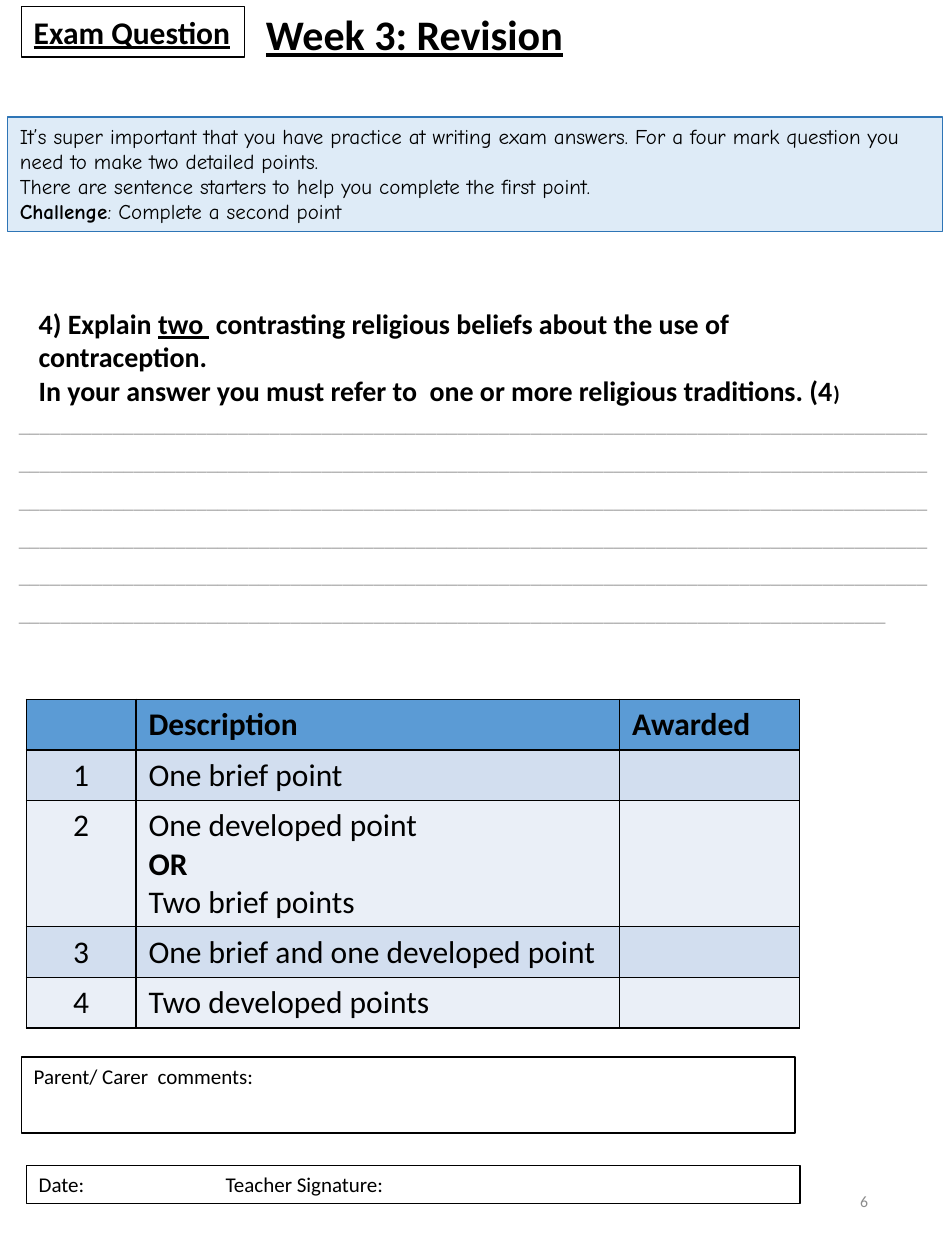
from lxml.etree import SubElement
from pptx import Presentation
from pptx.dml.color import RGBColor
from pptx.enum.shapes import MSO_SHAPE as Shape
from pptx.enum.text import MSO_ANCHOR as Anchor, PP_ALIGN as Align
from pptx.oxml.ns import qn
from pptx.util import Cm, Pt

BLACK = RGBColor(0, 0, 0)
GREY = RGBColor(0x8C, 0x8C, 0x8C)
RULE_GREY = RGBColor(0xA6, 0xA6, 0xA6)
INFO_FILL = RGBColor(0xDE, 0xEB, 0xF7)
INFO_LINE = RGBColor(0x2E, 0x75, 0xB6)
HEADER_FILL = RGBColor(0x5B, 0x9B, 0xD5)
BAND_FILLS = [RGBColor(0xD2, 0xDE, 0xEF), RGBColor(0xEA, 0xEF, 0xF7)]

MARKS = [
    ["", "Description", "Awarded"],
    ["1", "One brief point", ""],
    ["2", ["One developed point", [("OR", {"bold": True})], "Two brief points"], ""],
    ["3", "One brief and one developed point", ""],
    ["4", "Two developed points", ""],
]
COL_WIDTHS = [2.21, 9.75, 3.63]
ROW_HEIGHTS = [1.02, 1.02, 2.54, 1.02, 1.02]


def write(tf, paragraphs, *, size=12, font="Calibri", color=BLACK, bold=False,
          underline=False, align=Align.LEFT, spacing=None):
    """Fill a text frame; a paragraph is a string or a list of (text, format) runs."""
    if isinstance(paragraphs, str):
        paragraphs = [paragraphs]
    for i, content in enumerate(paragraphs):
        p = tf.paragraphs[0] if i == 0 else tf.add_paragraph()
        p.alignment = align
        if spacing:
            p.line_spacing = spacing
        runs = [(content, {})] if isinstance(content, str) else content
        for text, own in runs:
            r = p.add_run()
            r.text = text
            r.font.name = font
            r.font.size = Pt(own.get("size", size))
            r.font.bold = own.get("bold", bold)
            r.font.underline = own.get("underline", underline)
            r.font.color.rgb = color


def add_text(s, box, paragraphs, anchor=Anchor.TOP, **fmt):
    sp = s.shapes.add_textbox(*map(Cm, box))
    tf = sp.text_frame
    tf.word_wrap = True
    tf.vertical_anchor = anchor
    write(tf, paragraphs, **fmt)


def add_panel(s, box, paragraphs, fill=None, line=BLACK, **fmt):
    """Add an outlined rectangle with text at its top left."""
    sp = s.shapes.add_shape(Shape.RECTANGLE, *map(Cm, box))
    sp.shadow.inherit = False
    if fill:
        sp.fill.solid()
        sp.fill.fore_color.rgb = fill
    else:
        sp.fill.background()
    sp.line.color.rgb = line
    sp.line.width = Pt(0.75)
    tf = sp.text_frame
    tf.word_wrap = True
    tf.vertical_anchor = Anchor.TOP
    write(tf, paragraphs, **fmt)
    return sp


def add_tab_stop(p, position):
    tabs = SubElement(p._p.get_or_add_pPr(), qn("a:tabLst"))
    SubElement(tabs, qn("a:tab"), pos=str(position), algn="l")


def style_cell(cell, fill):
    """Set black borders, then the fill, in the order the schema asks for."""
    tc_pr = cell._tc.get_or_add_tcPr()
    for side in ("a:lnL", "a:lnR", "a:lnT", "a:lnB"):
        ln = SubElement(tc_pr, qn(side), w=str(Pt(1)))
        solid = SubElement(ln, qn("a:solidFill"))
        SubElement(solid, qn("a:srgbClr"), val=str(BLACK))
    cell.fill.solid()
    cell.fill.fore_color.rgb = fill


def add_mark_table(s, left, top):
    frame = s.shapes.add_table(len(MARKS), len(COL_WIDTHS), Cm(left), Cm(top),
                               Cm(sum(COL_WIDTHS)), Cm(sum(ROW_HEIGHTS)))
    table = frame.table
    for col, width in zip(table.columns, COL_WIDTHS):
        col.width = Cm(width)
    for i, (row, height) in enumerate(zip(MARKS, ROW_HEIGHTS)):
        table.rows[i].height = Cm(height)
        fill = BAND_FILLS[(i - 1) % 2] if i else HEADER_FILL
        for j, content in enumerate(row):
            cell = table.cell(i, j)
            style_cell(cell, fill)
            if content:
                write(cell.text_frame, content, size=18, bold=i == 0,
                      align=Align.LEFT if j else Align.CENTER)


def main():
    prs = Presentation()
    prs.slide_width, prs.slide_height = Cm(19.05), Cm(25.4)
    s = prs.slides.add_slide(prs.slide_layouts[6])

    add_text(s, (13.46, 23.55, 4.29, 1.35), "6", anchor=Anchor.MIDDLE,
             size=9, color=GREY, align=Align.RIGHT)
    add_text(s, (5.11, 0.05, 13.41, 1.27), "Week 3: Revision",
             size=24, bold=True, underline=True)
    add_panel(s, (0.43, 0.13, 4.5, 1.02), "Exam Question",
              size=18, bold=True, underline=True)
    add_panel(s, (0.43, 21.31, 15.6, 1.53), "Parent/ Carer  comments:")
    signature = add_panel(s, (0.53, 23.5, 15.6, 0.77), "Date:\tTeacher Signature:")
    add_tab_stop(signature.text_frame.paragraphs[0], Cm(3.77))

    add_panel(s, (0.15, 2.36, 18.85, 2.31), [
        "It’s super important that you have practice at writing exam answers. "
        "For a four mark question you need to make two detailed points.",
        "There are sentence starters to help you complete the first point.",
        [("Challenge", {"bold": True}), (": Complete a second point", {})],
    ], fill=INFO_FILL, line=INFO_LINE, font="Comic Neue")
    add_text(s, (0.53, 6.05, 17.6, 2.82), [
        [("4) Explain ", {}), ("two ", {"underline": True}),
         (" contrasting religious beliefs about the use of contraception.", {})],
        [("In your answer you must refer to  one or more religious traditions. (4", {}),
         (")", {"size": 12})],
    ], size=16, bold=True)
    add_text(s, (0.13, 7.92, 18.97, 4.88), ["_" * 87] * 5 + ["_" * 83],
             color=RULE_GREY, spacing=1.5)
    add_mark_table(s, 0.53, 14.1)

    prs.save("out.pptx")


if __name__ == "__main__":
    main()
